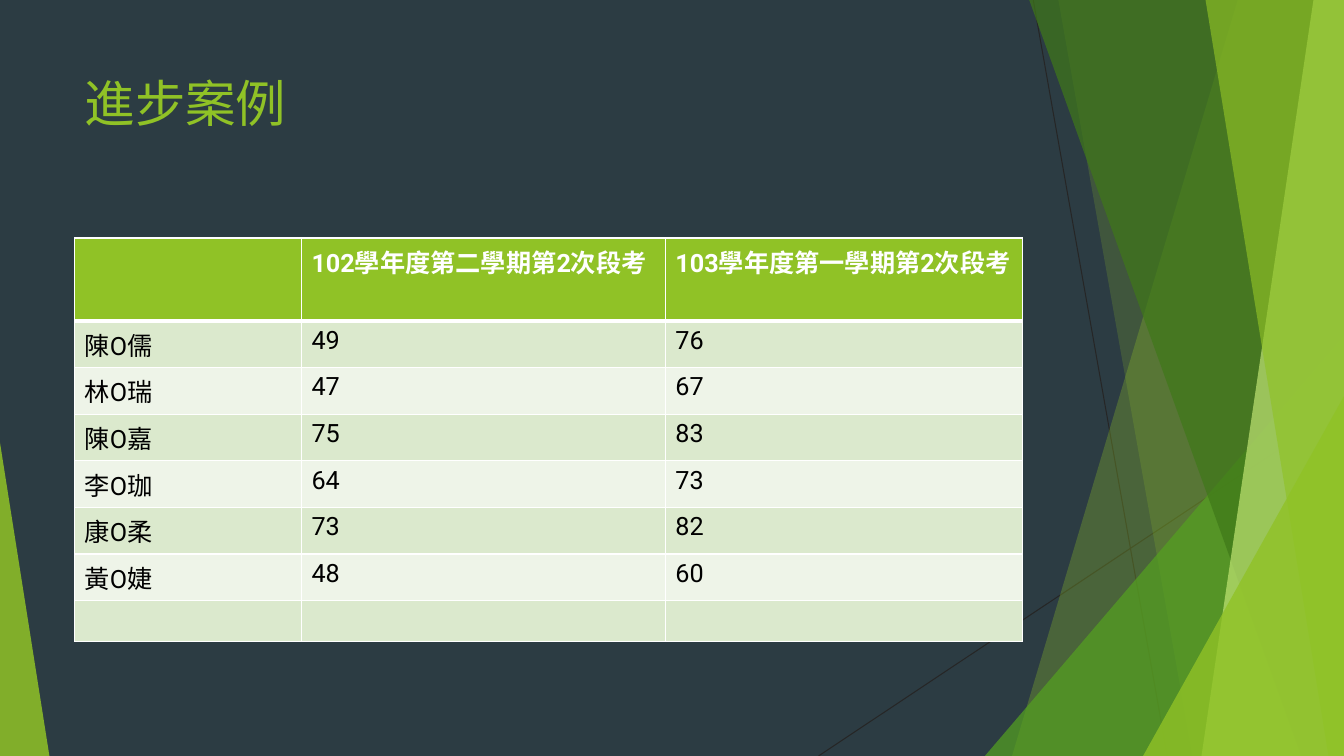
from lxml.etree import SubElement
from pptx import Presentation
from pptx.dml.color import RGBColor
from pptx.enum.shapes import MSO_CONNECTOR, MSO_SHAPE
from pptx.enum.text import MSO_ANCHOR, PP_ALIGN
from pptx.oxml import parse_xml
from pptx.oxml.ns import nsdecls, qn
from pptx.util import Inches, Pt

WIDTH, HEIGHT = Inches(13.333), Inches(7.5)
FONT = "Roboto"
SLATE = RGBColor(0x2C, 0x3C, 0x43)
CHARCOAL = RGBColor(0x26, 0x26, 0x26)
LIME = RGBColor(0x90, 0xC2, 0x26)
GREEN = RGBColor(0x54, 0xA0, 0x21)
FOREST = RGBColor(0x3F, 0x78, 0x19)
PALE_LIME = RGBColor(0xC0, 0xE4, 0x74)
ROW_DARK = RGBColor(0xDB, 0xE9, 0xCD)
ROW_LIGHT = RGBColor(0xEE, 0xF4, 0xE8)
WHITE = RGBColor(0xFF, 0xFF, 0xFF)
BLACK = RGBColor(0, 0, 0)

LEFT_MARGIN = 5.55
COLUMN_SHARES = (16.88, 27.08, 26.55)
ROW_SHARE = 5.4
SCORES = (
    ("", "102學年度第二學期第2次段考", "103學年度第一學期第2次段考"),
    ("陳O儒", "49", "76"),
    ("林O瑞", "47", "67"),
    ("陳O嘉", "75", "83"),
    ("李O珈", "64", "73"),
    ("康O柔", "73", "82"),
    ("黃O婕", "48", "60"),
    ("", "", ""),
)


def across(percent):
    return round(WIDTH * percent / 100)


def down(percent):
    return round(HEIGHT * percent / 100)


def paint(shape, color, opacity):
    shape.shadow.inherit = False
    shape.line.fill.background()
    shape.fill.solid()
    shape.fill.fore_color.rgb = color
    color_element = shape.fill._xPr.find(qn("a:solidFill"))[0]
    SubElement(color_element, qn("a:alpha"), val=str(opacity * 1000))


def add_band(slide, top_x, bottom_x, color, opacity):
    builder = slide.shapes.build_freeform(across(top_x), 0)
    builder.add_line_segments(
        [(WIDTH, 0), (WIDTH, HEIGHT), (across(bottom_x), HEIGHT)], close=True
    )
    paint(builder.convert_to_shape(), color, opacity)


def add_corner(slide, left, top, width, apex, color, opacity):
    shape = slide.shapes.add_shape(
        MSO_SHAPE.ISOSCELES_TRIANGLE,
        across(left), down(top), across(width), down(100 - top),
    )
    shape.adjustments[0] = apex
    paint(shape, color, opacity)


def add_thin_line(slide, start_x, start_y, end_x, end_y):
    line = slide.shapes.add_connector(
        MSO_CONNECTOR.STRAIGHT,
        across(start_x), down(start_y), across(end_x), down(end_y),
    )
    line.line.color.rgb = CHARCOAL
    line.line.width = Pt(0.75)
    SubElement(line._element.spPr, qn("a:effectLst"))


def add_run(paragraph, text, size, color, bold=False):
    run = paragraph.add_run()
    run.text = text
    run.font.name = FONT
    run.font.size = Pt(size)
    run.font.bold = bold
    run.font.color.rgb = color


def set_title(slide, text):
    title = slide.shapes.title
    title.left, title.top = across(LEFT_MARGIN), down(8.93)
    title.width, title.height = across(70.5), down(19.2)
    title.text_frame.vertical_anchor = MSO_ANCHOR.TOP
    title.text_frame.word_wrap = True
    paragraph = title.text_frame.paragraphs[0]
    paragraph.alignment = PP_ALIGN.LEFT
    add_run(paragraph, text, 36, LIME)


def set_borders(cell, top, bottom):
    properties = cell._tc.get_or_add_tcPr()
    sides = (("L", 1), ("R", 1), ("T", top), ("B", bottom))
    for position, (side, width) in enumerate(sides):
        properties.insert(position, parse_xml(
            f'<a:ln{side} {nsdecls("a")} w="{Pt(width)}"><a:solidFill>'
            f'<a:srgbClr val="{WHITE}"/></a:solidFill></a:ln{side}>'
        ))


def add_score_table(slide):
    table = slide.shapes.add_table(
        len(SCORES), len(COLUMN_SHARES), across(LEFT_MARGIN), down(31.47),
        across(sum(COLUMN_SHARES)), down(ROW_SHARE * len(SCORES)),
    ).table
    for column, share in zip(table.columns, COLUMN_SHARES):
        column.width = across(share)
    for row_index, values in enumerate(SCORES):
        header = row_index == 0
        fill = LIME if header else ROW_DARK if row_index % 2 else ROW_LIGHT
        for column_index, value in enumerate(values):
            cell = table.cell(row_index, column_index)
            cell.fill.solid()
            cell.fill.fore_color.rgb = fill
            set_borders(cell, 3 if row_index == 1 else 1, 3 if header else 1)
            if value:
                add_run(cell.text_frame.paragraphs[0], value, 18,
                        WHITE if header else BLACK, header)


def add_facets(slide):
    add_thin_line(slide, 76.88, 0, 86.85, 100)
    add_thin_line(slide, 100, 53.73, 60.9, 100)
    add_band(slide, 92.1, 75.3, LIME, 30)
    add_band(slide, 78.75, 88.73, LIME, 20)
    add_corner(slide, 73.28, 44.4, 26.72, 1, GREEN, 72)
    add_band(slide, 76.58, 96.83, FOREST, 70)
    add_band(slide, 97.73, 89.4, PALE_LIME, 70)
    add_band(slide, 89.7, 98.85, LIME, 65)
    add_corner(slide, 85.05, 52.4, 14.95, 1, LIME, 80)
    add_corner(slide, 0, 58.53, 3.68, 0, LIME, 85)


def main():
    presentation = Presentation()
    presentation.slide_width, presentation.slide_height = WIDTH, HEIGHT
    slide = presentation.slides.add_slide(presentation.slide_layouts[5])
    slide.background.fill.solid()
    slide.background.fill.fore_color.rgb = SLATE
    add_facets(slide)
    set_title(slide, "進步案例")
    add_score_table(slide)
    presentation.save("out.pptx")


if __name__ == "__main__":
    main()
